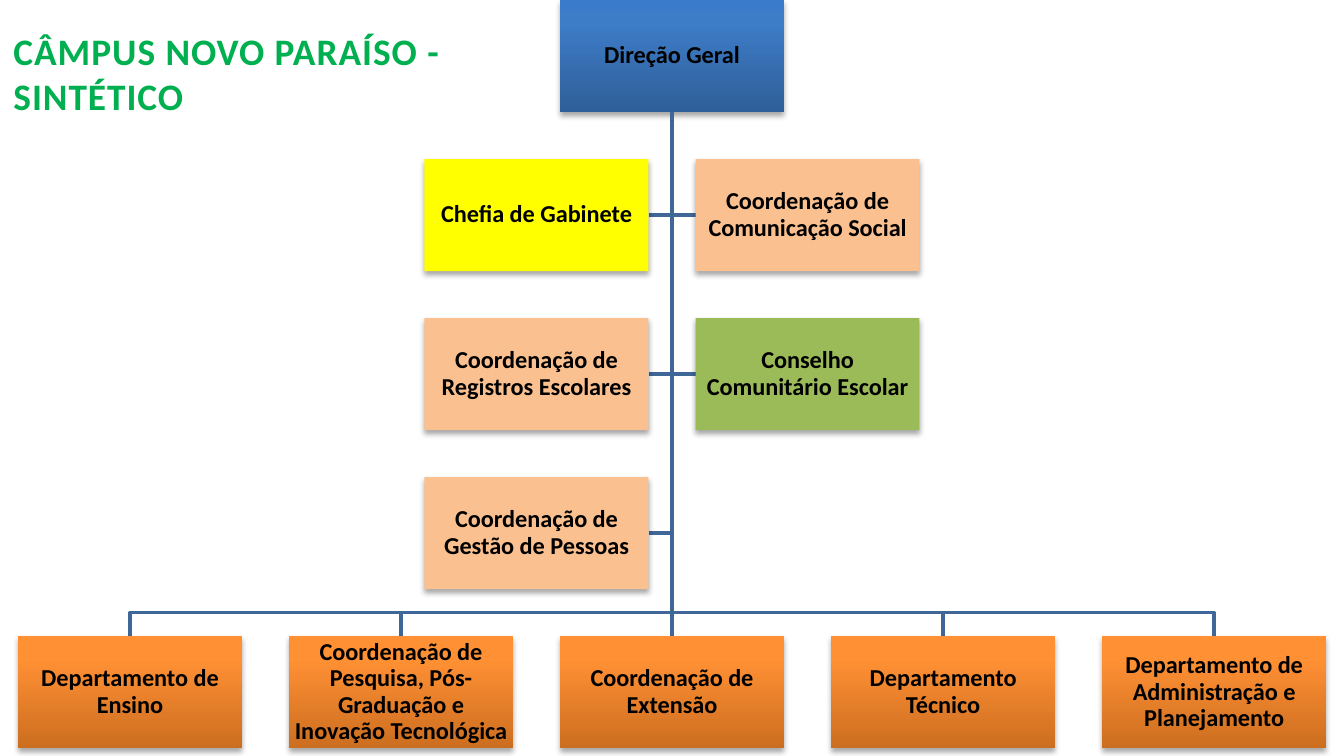
from pptx import Presentation
from pptx.dml.color import RGBColor
from pptx.enum.shapes import MSO_CONNECTOR, MSO_SHAPE
from pptx.enum.text import MSO_ANCHOR, PP_ALIGN
from pptx.oxml import parse_xml
from pptx.oxml.ns import nsdecls, qn
from pptx.util import Inches, Pt

RECT = MSO_SHAPE.RECTANGLE
LINE = MSO_CONNECTOR.STRAIGHT
TOP, MIDDLE = MSO_ANCHOR.TOP, MSO_ANCHOR.MIDDLE
LEFT, CENTER = PP_ALIGN.LEFT, PP_ALIGN.CENTER

# Content
TITLE = "CÂMPUS NOVO PARAÍSO - SINTÉTICO"
ROOT = "Direção Geral"
STAFF = [  # name, side (-1 left, 1 right), row, colour
    ("Chefia de Gabinete", -1, 1, "yellow"),
    ("Coordenação de Comunicação Social", 1, 1, "peach"),
    ("Coordenação de Registros Escolares", -1, 2, "peach"),
    ("Conselho Comunitário Escolar", 1, 2, "green"),
    ("Coordenação de Gestão de Pessoas", -1, 3, "peach"),
]
UNITS = [
    "Departamento de Ensino",
    "Coordenação de Pesquisa, Pós-Graduação e Inovação Tecnológica",
    "Coordenação de Extensão",
    "Departamento Técnico",
    "Departamento de Administração e Planejamento",
]

# Style
FONT = "Calibri"
COLORS = {"title": "00B050", "text": "000000", "line": "3F6797",
          "yellow": "FFFF00", "peach": "FAC090", "green": "9BBB59"}
GRADS = {"blue": ((0, "2F5F99"), (80, "3D7CC7"), (100, "3A7CCB")),
         "orange": ((0, "CC6E20"), (80, "FF9034"), (100, "FF9136"))}

# Grid: 16:9 slide, boxes twice as wide as high, one gap both ways
WIDE = 10
HIGH = WIDE * 9 / 16
BOX_W = WIDE / 6
BOX_H = BOX_W / 2
GAP = 0.21 * BOX_W
MID = WIDE / 2
COL, ROW = BOX_W + GAP, BOX_H + GAP
LAST = 4 * ROW
BUS = LAST - GAP / 2


def rgb(name):
    return RGBColor.from_string(COLORS[name])


def style_text(para, size, color):
    font = para.runs[0].font
    font.name, font.size, font.bold = FONT, Pt(size), True
    font.color.rgb = rgb(color)
    return para.runs[0]


def style_line(shape):
    shape.line.color.rgb = rgb("line")
    shape.line.width = Pt(2)


def add_path(slide, *points):
    """Draw an open path from the foot of the root box."""
    pts = [(Inches(x), Inches(y)) for x, y in points]
    build = slide.shapes.build_freeform(Inches(MID), Inches(BOX_H))
    build.add_line_segments(pts, close=False)
    path = build.convert_to_shape()
    path.fill.background()
    path.shadow.inherit = False
    style_line(path)


def fill_grad(shape, stops):
    shape.fill.gradient()
    shape.fill.gradient_angle = 90
    items = shape.element.spPr.find(qn("a:gradFill")).find(qn("a:gsLst"))
    for old in list(items):
        items.remove(old)
    for pos, color in stops:
        items.append(parse_xml(
            f'<a:gs {nsdecls("a")} pos="{pos * 1000}">'
            f'<a:srgbClr val="{color}"/></a:gs>'))


def add_shadow(shape):
    shape.shadow.inherit = False
    shape.element.spPr.find(qn("a:effectLst")).append(parse_xml(
        f'<a:outerShdw {nsdecls("a")} blurRad="40000" dist="23000" '
        'dir="5400000" rotWithShape="0"><a:srgbClr val="000000">'
        '<a:alpha val="35000"/></a:srgbClr></a:outerShdw>'))


def add_box(slide, text, mid, top, color):
    box = slide.shapes.add_shape(RECT, Inches(mid - BOX_W / 2), Inches(top),
                                 Inches(BOX_W), Inches(BOX_H))
    if color in GRADS:
        fill_grad(box, GRADS[color])
    else:
        box.fill.solid()
        box.fill.fore_color.rgb = rgb(color)
    box.line.fill.background()
    add_shadow(box)
    frame = box.text_frame
    frame.text = text
    frame.word_wrap = True
    frame.vertical_anchor = MIDDLE
    frame.margin_left = frame.margin_right = Inches(0.02)
    frame.margin_top = frame.margin_bottom = Inches(0.01)
    para = frame.paragraphs[0]
    para.alignment, para.line_spacing = CENTER, 0.9
    style_text(para, 13, "text")
    return box


def add_title(slide):
    title = slide.shapes.title
    title.left, title.top = Inches(0), Inches(0.16)
    title.width, title.height = Inches(3.89), Inches(0.77)
    frame = title.text_frame
    frame.text = TITLE
    frame.word_wrap = True
    frame.vertical_anchor = TOP
    para = frame.paragraphs[0]
    para.alignment = LEFT
    run = style_text(para, 20, "title")
    run.font._element.set("spc", "50")


def main():
    prs = Presentation()
    prs.slide_width, prs.slide_height = Inches(WIDE), Inches(HIGH)
    slide = prs.slides.add_slide(prs.slide_layouts[5])
    add_title(slide)

    # Branches, behind the boxes
    for _, side, row, _ in STAFF:
        y = row * ROW + BOX_H / 2
        add_path(slide, (MID, y), (MID + side * GAP / 2, y))
    mids = [MID + (i - len(UNITS) // 2) * COL for i in range(len(UNITS))]
    for x in mids:
        if x != MID:
            add_path(slide, (MID, BUS), (x, BUS), (x, LAST))

    # Boxes
    root = add_box(slide, ROOT, MID, 0, "blue")
    units = [add_box(slide, name, x, LAST, "orange")
             for name, x in zip(UNITS, mids)]
    for name, side, row, color in STAFF:
        add_box(slide, name, MID + side * COL / 2, row * ROW, color)

    # Trunk from the root to the middle unit
    trunk = slide.shapes.add_connector(LINE, 0, 0, 0, 0)
    trunk.begin_connect(root, 2)
    trunk.end_connect(units[len(units) // 2], 0)
    style_line(trunk)
    trunk.element.spPr.append(parse_xml(f'<a:effectLst {nsdecls("a")}/>'))

    prs.save("out.pptx")


if __name__ == "__main__":
    main()
